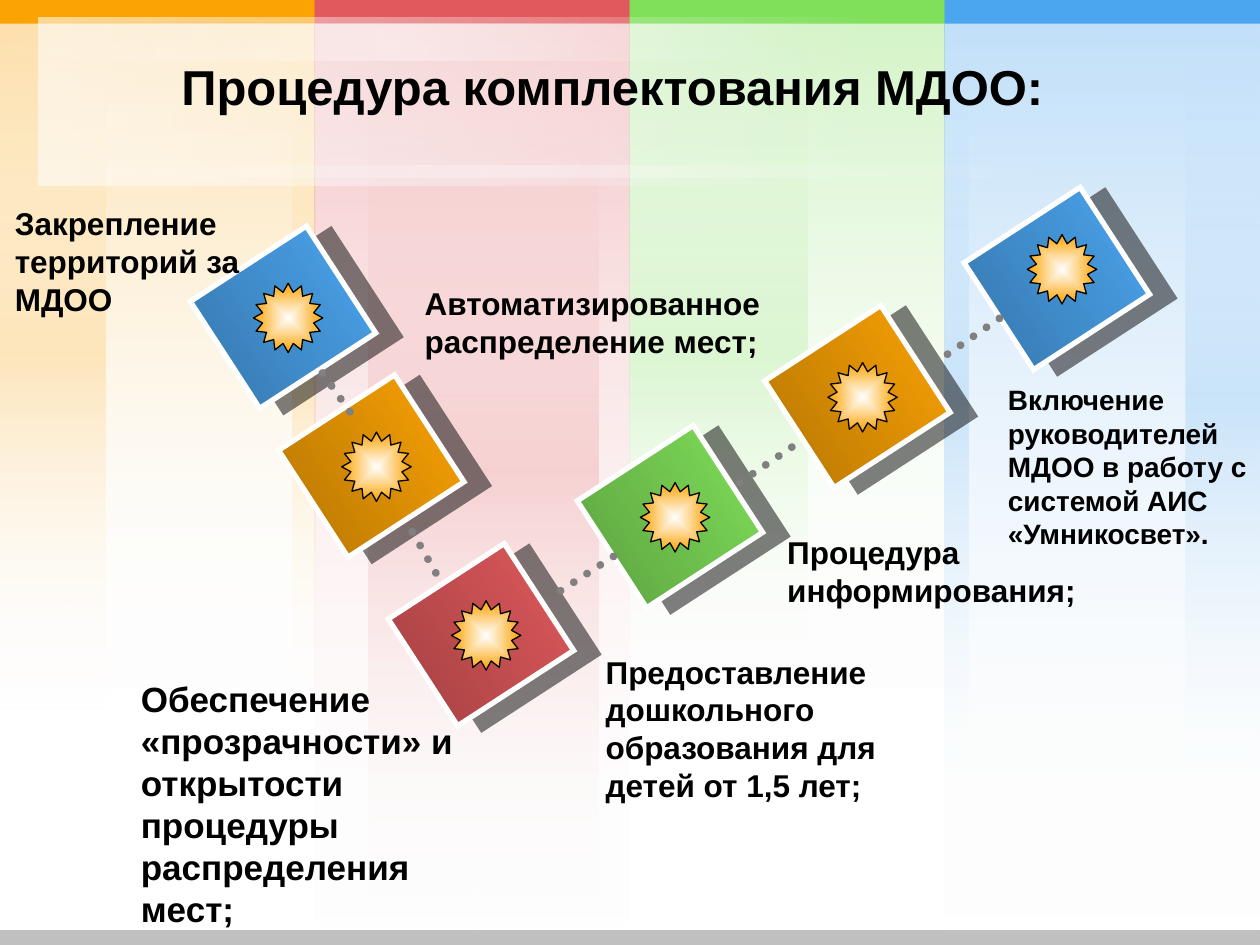
from lxml import etree
from pptx import Presentation
from pptx.dml.color import RGBColor
from pptx.enum import dml, shapes, text
from pptx.oxml import ns
from pptx.util import Cm, Pt

BLACK = RGBColor(0x00, 0x00, 0x00)
WHITE = RGBColor(0xFF, 0xFF, 0xFF)
GRAY = RGBColor(0x80, 0x80, 0x80)
SILVER = RGBColor(0xC0, 0xC0, 0xC0)
GOLD = RGBColor(0xFC, 0xA3, 0x04)
RED = RGBColor(0xE1, 0x59, 0x5C)
GREEN = RGBColor(0x80, 0xE0, 0x5A)
BLUE = RGBColor(0x4B, 0xA5, 0xEF)
DARK = {
    GOLD: RGBColor(0xB4, 0x75, 0x03),
    RED: RGBColor(0xA1, 0x40, 0x42),
    GREEN: RGBColor(0x5C, 0xA0, 0x40),
    BLUE: RGBColor(0x36, 0x76, 0xAB),
}
KIND = shapes.MSO_SHAPE
BAND = 6.35


def add(parent, tag, **attrs):
    node = etree.SubElement(parent, ns.qn(tag))
    for key, val in attrs.items():
        node.set(key, str(val))
    return node


def paint(shape, stops, radial=False):
    shape.fill.background()
    props = shape._element.spPr
    grad = etree.Element(ns.qn("a:gradFill"), rotWithShape="1")
    props.replace(props.find(ns.qn("a:noFill")), grad)
    group = add(grad, "a:gsLst")
    for pos, color, alpha in stops:
        stop = add(group, "a:gs", pos=pos * 1000)
        tone = add(stop, "a:srgbClr", val=color)
        if alpha < 100:
            add(tone, "a:alpha", val=alpha * 1000)
    if radial:
        way = add(grad, "a:path", path="shape")
        add(way, "a:fillToRect", l=50000, t=50000, r=50000, b=50000)
    else:
        add(grad, "a:lin", ang=5400000, scaled=1)


def write(frame, words, size=18, color=BLACK, font="Arial", bold=True,
          align=text.PP_ALIGN.LEFT):
    frame.word_wrap = True
    para = frame.paragraphs[0]
    para.alignment = align
    run = para.add_run()
    run.text = words
    run.font.size = Pt(size)
    run.font.name = font
    run.font.bold = bold
    run.font.color.rgb = color


class Deck:
    tile_w, tile_h, tilt = 2.57, 2.79, 57
    star_w = 1.4

    def __init__(self):
        self.show = Presentation()
        self.show.slide_width = Cm(25.4)
        self.show.slide_height = Cm(19.05)
        self.slide = self.show.slides.add_slide(self.show.slide_layouts[5])

    def shape(self, kind, x, y, w, h, turn=0):
        item = self.slide.shapes.add_shape(kind, Cm(x), Cm(y), Cm(w), Cm(h))
        item.shadow.inherit = False
        item.rotation = turn
        item.line.fill.background()
        return item

    def bar(self, x, y, w, h, color):
        item = self.shape(KIND.RECTANGLE, x, y, w, h)
        item.fill.solid()
        item.fill.fore_color.rgb = color

    def fade(self, x, y, w, h, color, alpha, turn=0):
        item = self.shape(KIND.RECTANGLE, x, y, w, h, turn)
        paint(item, [(0, color, alpha), (100, WHITE, 0)])

    def glow(self, x, y, w, h, color, alpha, turn=0):
        item = self.shape(KIND.RECTANGLE, x, y, w, h, turn)
        paint(item, [(0, WHITE, 0), (50, color, alpha), (100, WHITE, 0)])

    def title(self, words):
        item = self.slide.shapes.title
        item.left, item.top = Cm(0), Cm(0.53)
        item.width, item.height = Cm(24.69), Cm(2.39)
        item.text_frame.vertical_anchor = text.MSO_ANCHOR.MIDDLE
        write(item.text_frame, words, size=28, align=text.PP_ALIGN.CENTER)
        self.slide.shapes._spTree.append(item._element)

    def tile(self, x, y, color):
        item = self.shape(KIND.RECTANGLE, x, y, self.tile_w, self.tile_h, self.tilt)
        paint(item, [(0, color, 100), (100, DARK[color], 100)])
        item.line.color.rgb = WHITE
        item.line.width = Pt(3)
        props = item._element.spPr
        add(props.find(ns.qn("a:ln")), "a:miter", lim=800000)
        effect = props.find(ns.qn("a:effectLst"))
        shade = add(effect, "a:outerShdw", blurRad=0, dist=Pt(14.1),
                    dir=8 * 60000, algn="ctr", rotWithShape=0)
        tone = add(shade, "a:srgbClr", val=BLACK)
        add(tone, "a:alpha", val=50000)

    def star(self, x, y):
        item = self.shape(KIND.STAR_16_POINT, x, y, self.star_w, self.star_w)
        item.adjustments[0] = 0.375
        paint(item, [(0, WHITE, 100), (100, GOLD, 100)], radial=True)
        item.line.color.rgb = BLACK
        item.line.width = Pt(0.75)

    def dots(self, x1, y1, x2, y2):
        item = self.slide.shapes.add_connector(
            shapes.MSO_CONNECTOR.STRAIGHT, Cm(x1), Cm(y1), Cm(x2), Cm(y2))
        item.line.color.rgb = GRAY
        item.line.width = Pt(4.5)
        item.line.dash_style = dml.MSO_LINE.ROUND_DOT
        props = item._element.spPr
        props.find(ns.qn("a:ln")).set("cap", "rnd")
        add(props, "a:effectLst")

    def label(self, x, y, w, h, words, size=18):
        item = self.slide.shapes.add_textbox(Cm(x), Cm(y), Cm(w), Cm(h))
        write(item.text_frame, words, size=size)
        item.text_frame.auto_size = text.MSO_AUTO_SIZE.SHAPE_TO_FIT_TEXT


def main():
    deck = Deck()
    bands = [
        (GOLD, 14.27, 14.27, [(5.89, 0.46), (0, 2.13)]),
        (RED, 19.05, 19.05, [(7.42, 4.65)]),
        (GREEN, 14.27, 14.27, [(12.7, 3.58)]),
        (BLUE, 18.97, 16.18, [(19.05, 0.48), (23.9, 1.5)]),
    ]
    for num, (color, high, low, strips) in enumerate(bands):
        left = num * BAND
        deck.fade(left, 0, BAND, high, color, 20)
        for x, w in strips:
            deck.glow(x, 0, w, low, color, 20)
        deck.fade(left, 0, BAND, high, color, 20)
        deck.bar(left, 0, BAND, 0.48, color)

    sheen = (7.85, -6.72, 3.4, 17.53, WHITE, 35, 270)
    deck.glow(10.57, -7.24, 0.25, 21.39, WHITE, 35, 270)
    deck.fade(*sheen)
    deck.glow(7.77, -7.29, 0.74, 16.28, WHITE, 35, 270)
    deck.fade(*sheen)
    deck.bar(0, 18.75, 25.4, 0.3, SILVER)
    deck.title("Процедура комплектования МДОО:")

    tiles = [
        (4.42, 5, BLUE, 0.71), (6.2, 8, GOLD, 0.71), (8.41, 11.4, RED, 0.71),
        (12.22, 9.02, GREEN, 0.71), (16, 6.6, GOLD, 0.71), (20.02, 4.22, BLUE, 0.51),
    ]
    for x, y, color, _ in tiles:
        deck.tile(x, y, color)
    for ends in [
        (6.5, 7.52, 7.06, 8.31), (8.31, 10.72, 8.89, 11.73),
        (11.3, 11.91, 12.5, 11.13), (14.91, 9.73, 16.1, 8.92),
        (19.1, 7.14, 20.29, 6.32),
    ]:
        deck.dots(*ends)
    for x, y, _, drop in tiles:
        deck.star(x + 0.69, y + drop)

    deck.label(0.05, 3.99, 5.03, 2.57, "Закрепление территорий за МДОО")
    deck.label(8.31, 5.61, 7.49, 1.8, "Автоматизированное распределение мест;")
    deck.label(2.59, 13.54, 7.8, 5.38,
               "Обеспечение «прозрачности» и открытости процедуры распределения мест;", 20)
    deck.label(11.96, 13.03, 6.53, 3.33,
               "Предоставление дошкольного образования для детей от 1,5 лет;")
    deck.label(15.62, 10.62, 6.63, 1.8, "Процедура информирования;")
    deck.label(20.07, 7.59, 6.2, 3.68,
               "Включение руководителей МДОО в работу с системой АИС «Умникосвет».", 16)
    deck.show.save("out.pptx")


if __name__ == "__main__":
    main()
